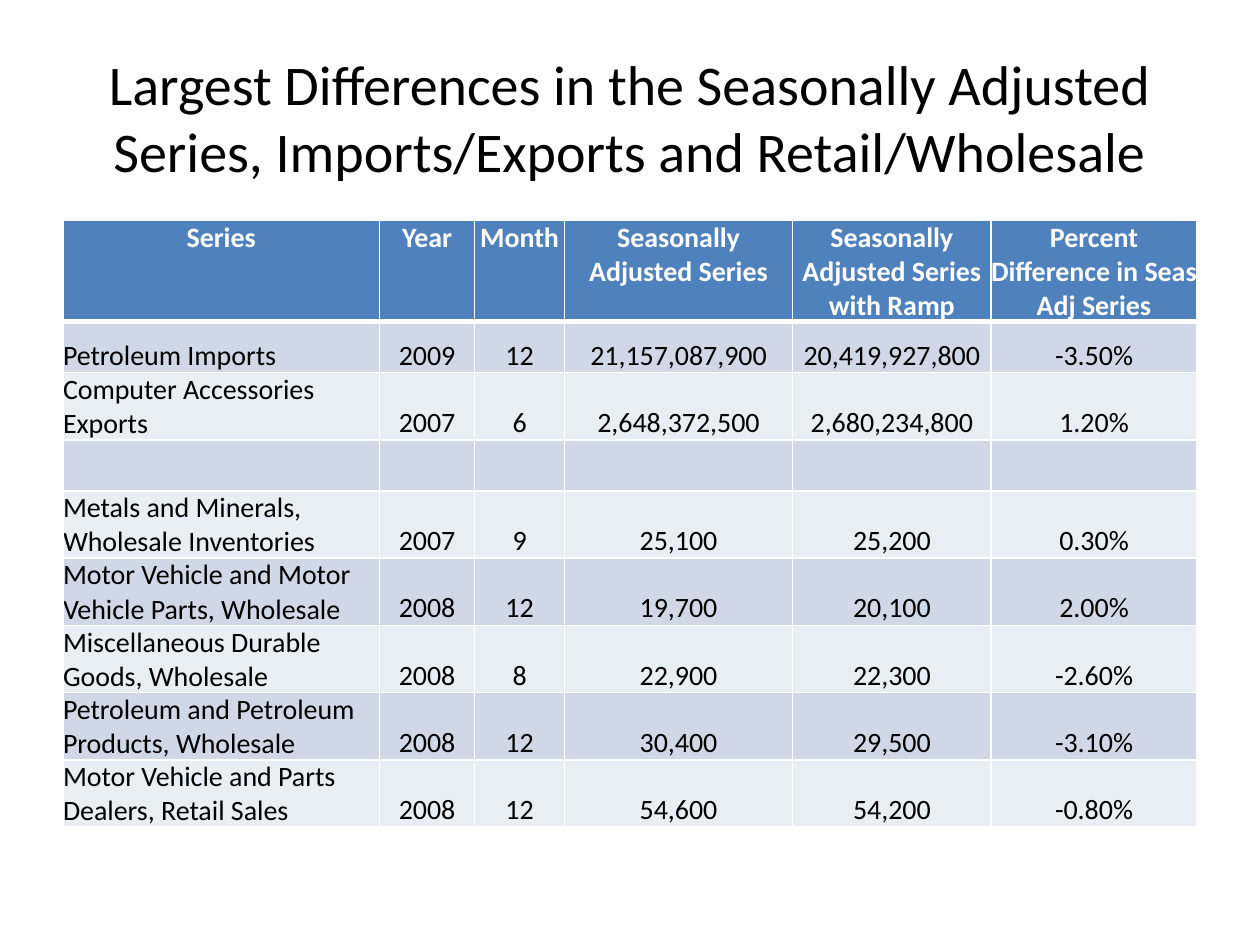
from dataclasses import dataclass

from lxml import etree
from pptx import Presentation
from pptx.dml.color import RGBColor
from pptx.enum import text
from pptx.oxml import ns
from pptx.util import Cm, Pt


@dataclass(frozen=True)
class Theme:
    font: str = "Calibri"
    title_size: int = 32
    table_size: int = 16
    ink: str = "000000"
    paper: str = "FFFFFF"
    header: str = "4F81BD"
    bands: tuple = ("D0D8E8", "E9EDF4")
    rule: float = 1
    header_rule: float = 3


THEME = Theme()

TITLE = ("Largest Differences in the Seasonally Adjusted Series, "
         "Imports/Exports and Retail/Wholesale")
HEADINGS = ("Series", "Year", "Month", "Seasonally Adjusted Series",
            "Seasonally Adjusted Series with Ramp",
            "Percent Difference in Seas Adj Series")
TRADE = [
    ("Petroleum Imports", "2009", "12", "21,157,087,900", "20,419,927,800", "-3.50%"),
    ("Computer Accessories Exports", "2007", "6", "2,648,372,500", "2,680,234,800", "1.20%"),
]
SALES = [
    ("Metals and Minerals, Wholesale Inventories", "2007", "9", "25,100", "25,200", "0.30%"),
    ("Motor Vehicle and Motor Vehicle Parts, Wholesale", "2008", "12", "19,700", "20,100", "2.00%"),
    ("Miscellaneous Durable Goods, Wholesale", "2008", "8", "22,900", "22,300", "-2.60%"),
    ("Petroleum and Petroleum Products, Wholesale", "2008", "12", "30,400", "29,500", "-3.10%"),
    ("Motor Vehicle and Parts Dealers, Retail Sales", "2008", "12", "54,600", "54,200", "-0.80%"),
]
SEPARATOR = ("",) * len(HEADINGS)
COLUMN_WIDTHS = (6.38, 1.92, 1.81, 4.6, 4, 4.15)
ROW_HEIGHT = 1.03


def style_paragraph(paragraph, size, color, align, bold=False):
    paragraph.alignment = align
    font = paragraph.font
    for target in [font] + [run.font for run in paragraph.runs]:
        target.name = THEME.font
        target.size = Pt(size)
        target.bold = bold
        target.color.rgb = RGBColor.from_string(color)


def set_borders(cell, **widths):
    """Draw the cell's sides (L, R, T, B) in the paper colour."""
    properties = cell._tc.get_or_add_tcPr()
    for side, width in widths.items():
        line = etree.SubElement(properties, ns.qn(f"a:ln{side}"), w=str(Pt(width)))
        fill = etree.SubElement(line, ns.qn("a:solidFill"))
        etree.SubElement(fill, ns.qn("a:srgbClr"), val=THEME.paper)


def add_title(slide, left, top, width, height):
    frame = slide.shapes.add_textbox(Cm(left), Cm(top), Cm(width), Cm(height)).text_frame
    frame.word_wrap = True
    frame.vertical_anchor = text.MSO_ANCHOR.MIDDLE
    frame.text = TITLE
    style_paragraph(frame.paragraphs[0], THEME.title_size, THEME.ink, text.PP_ALIGN.CENTER)


def fill_cell(cell, value, row, column):
    is_header = row == 0
    cell.margin_left = cell.margin_right = cell.margin_top = cell.margin_bottom = 0
    cell.vertical_anchor = text.MSO_ANCHOR.TOP if is_header else text.MSO_ANCHOR.BOTTOM
    cell.text = value
    centered = is_header or column > 0
    style_paragraph(cell.text_frame.paragraphs[0], THEME.table_size,
                    THEME.paper if is_header else THEME.ink,
                    text.PP_ALIGN.CENTER if centered else text.PP_ALIGN.LEFT,
                    bold=is_header)
    set_borders(cell, L=THEME.rule, R=THEME.rule,
                T=THEME.header_rule if row == 1 else THEME.rule,
                B=THEME.header_rule if is_header else THEME.rule)
    cell.fill.solid()
    background = THEME.header if is_header else THEME.bands[(row - 1) % 2]
    cell.fill.fore_color.rgb = RGBColor.from_string(background)


def add_differences_table(slide, left, top, width):
    rows = [HEADINGS, *TRADE, SEPARATOR, *SALES]
    table = slide.shapes.add_table(len(rows), len(HEADINGS), Cm(left), Cm(top),
                                   Cm(width), Cm(ROW_HEIGHT * len(rows))).table
    scale = width / sum(COLUMN_WIDTHS)
    for column, column_width in zip(table.columns, COLUMN_WIDTHS):
        column.width = Cm(column_width * scale)
    for row, values in enumerate(rows):
        table.rows[row].height = Cm(ROW_HEIGHT)
        for column, value in enumerate(values):
            fill_cell(table.cell(row, column), value, row, column)


def main():
    deck = Presentation()
    deck.slide_width, deck.slide_height = Cm(25.4), Cm(19.05)
    slide = deck.slides.add_slide(deck.slide_layouts[6])
    margin = 1.27
    content_width = 25.4 - 2 * margin
    add_title(slide, margin, 0.76, content_width, 3.18)
    add_differences_table(slide, margin, 4.45, content_width)
    deck.save("out.pptx")


if __name__ == "__main__":
    main()
